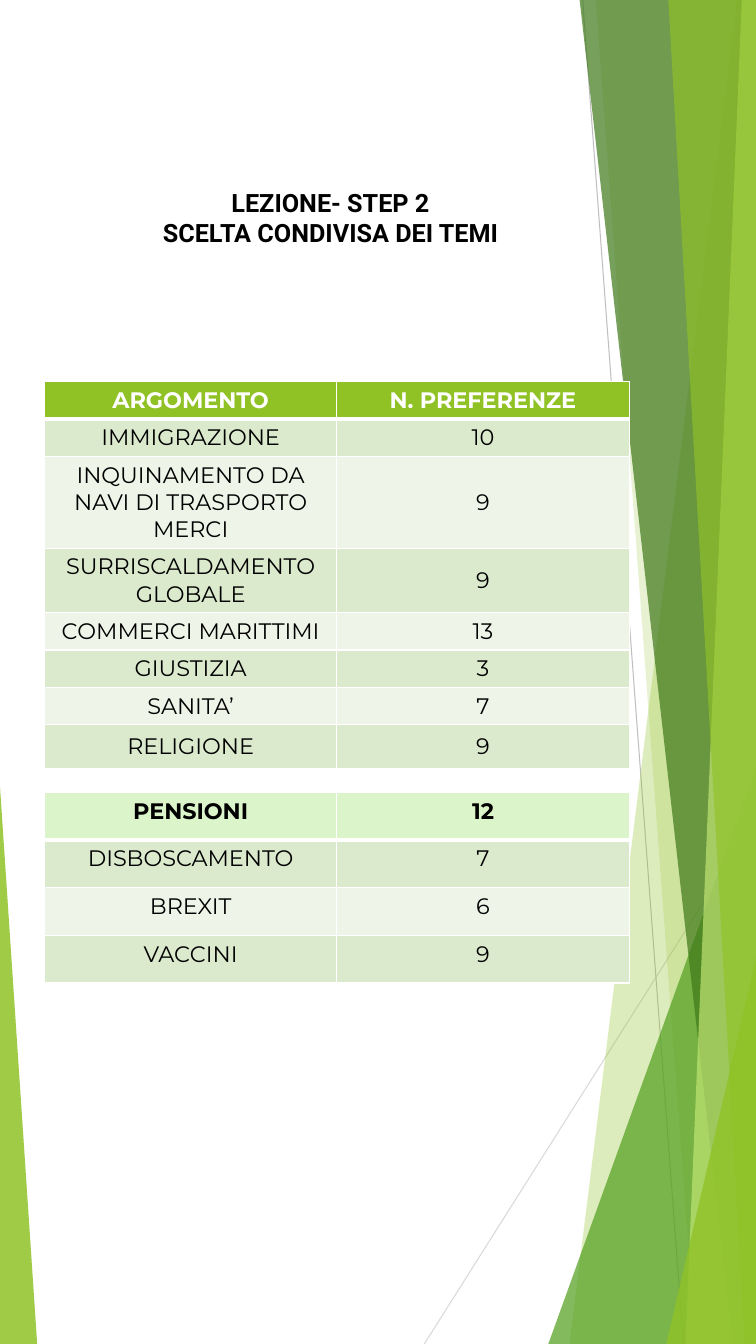
from dataclasses import dataclass

from lxml.etree import SubElement
from pptx import Presentation
from pptx.dml.color import RGBColor
from pptx.enum.shapes import MSO_CONNECTOR
from pptx.enum.text import MSO_ANCHOR, PP_ALIGN
from pptx.oxml.ns import qn
from pptx.slide import Slide
from pptx.table import _Cell as Cell
from pptx.util import Pt

WIDTH, HEIGHT = 540, 960
WHITE = RGBColor(0xFF, 0xFF, 0xFF)
BLACK = RGBColor(0x00, 0x00, 0x00)
LIME = RGBColor(0x90, 0xC2, 0x26)
GREEN = RGBColor(0x54, 0xA0, 0x21)
FOREST = RGBColor(0x3F, 0x78, 0x19)
PALE_LIME = RGBColor(0xC0, 0xE4, 0x74)
MINT = RGBColor(0xDB, 0xF4, 0xCA)
BANDS = (RGBColor(0xDB, 0xE9, 0xCD), RGBColor(0xEE, 0xF4, 0xE8))
LIGHT_GRAY = RGBColor(0xD9, 0xD9, 0xD9)
GRAY = RGBColor(0xBF, 0xBF, 0xBF)

Point = tuple[float, float]


@dataclass(frozen=True)
class Facet:
    points: tuple[Point, ...]
    color: RGBColor
    opacity: int


@dataclass(frozen=True)
class Ray:
    start: Point
    end: Point
    color: RGBColor


@dataclass(frozen=True)
class TopicTable:
    top: float
    row_heights: tuple[float, ...]
    rows: tuple[tuple[str, str], ...]
    header_fill: RGBColor
    header_color: RGBColor
    anchor: MSO_ANCHOR


def right_band(top_x: float, bottom_x: float, color: RGBColor, opacity: int) -> Facet:
    corners = ((top_x, 0), (bottom_x, HEIGHT), (WIDTH, HEIGHT), (WIDTH, 0))
    return Facet(corners, color, opacity)


def right_wedge(bottom_x: float, top_y: float, color: RGBColor, opacity: int) -> Facet:
    corners = ((bottom_x, HEIGHT), (WIDTH, top_y), (WIDTH, HEIGHT))
    return Facet(corners, color, opacity)


BACKDROP = (
    Facet(((0, 561.6), (26.6, HEIGHT), (0, HEIGHT)), LIME, 85),
    Ray((303.1, HEIGHT), (WIDTH, 585), LIGHT_GRAY),
    Ray((416.2, 0), (488.2, HEIGHT), GRAY),
    right_band(526.3, 406.8, LIME, 30),
    right_band(425.5, 496.8, LIME, 20),
    right_wedge(391.7, 548.6, GREEN, 72),
    right_band(414, 523.4, FOREST, 70),
    right_band(529.9, 489.6, PALE_LIME, 70),
    right_band(477.4, 532.1, LIME, 65),
    right_wedge(475.9, 684.7, LIME, 80),
)

TABLES = (
    TopicTable(
        272.6,
        (26.2, 26.2, 54.7, 38.9, 26.2, 26.2, 26.2, 31.7),
        (
            ("ARGOMENTO", "N. PREFERENZE"),
            ("IMMIGRAZIONE", "10"),
            ("INQUINAMENTO DA NAVI DI TRASPORTO MERCI", "9"),
            ("SURRISCALDAMENTO GLOBALE", "9"),
            ("COMMERCI MARITTIMI", "13"),
            ("GIUSTIZIA", "3"),
            ("SANITA’", "7"),
            ("RELIGIONE", "9"),
        ),
        LIME, WHITE, MSO_ANCHOR.MIDDLE,
    ),
    TopicTable(
        566.2,
        (34,) * 4,
        (("PENSIONI", "12"), ("DISBOSCAMENTO", "7"), ("BREXIT", "6"), ("VACCINI", "9")),
        MINT, BLACK, MSO_ANCHOR.TOP,
    ),
)


def draw_facet(slide: Slide, facet: Facet) -> None:
    first, *others = [(Pt(x), Pt(y)) for x, y in facet.points]
    builder = slide.shapes.build_freeform(*first)
    builder.add_line_segments(others)
    shape = builder.convert_to_shape()
    shape.shadow.inherit = False
    shape.line.fill.background()
    shape.fill.solid()
    shape.fill.fore_color.rgb = facet.color
    color = shape.fill._xPr.find(qn("a:solidFill"))[0]
    SubElement(color, qn("a:alpha"), val=str(facet.opacity * 1000))


def draw_ray(slide: Slide, ray: Ray) -> None:
    ends = [Pt(value) for value in ray.start + ray.end]
    connector = slide.shapes.add_connector(MSO_CONNECTOR.STRAIGHT, *ends)
    connector.line.color.rgb = ray.color
    connector.line.width = Pt(0.75)
    SubElement(connector._element.spPr, qn("a:effectLst"))


def set_borders(cell: Cell, row: int) -> None:
    properties = cell._tc.get_or_add_tcPr()
    widths = {"L": 1, "R": 1, "T": 3 if row == 1 else 1, "B": 3 if row == 0 else 1}
    for side, width in widths.items():
        line = SubElement(properties, qn(f"a:ln{side}"), w=str(Pt(width)))
        SubElement(SubElement(line, qn("a:solidFill")), qn("a:srgbClr"), val=str(WHITE))


def draw_table(slide: Slide, topics: TopicTable) -> None:
    frame = slide.shapes.add_table(
        len(topics.rows), 2, Pt(31.8), Pt(topics.top), Pt(417.6), Pt(sum(topics.row_heights))
    )
    table = frame.table
    table.first_row = table.horz_banding = False
    for row, (height, texts) in enumerate(zip(topics.row_heights, topics.rows)):
        table.rows[row].height = Pt(height)
        is_header = row == 0
        for column, text in enumerate(texts):
            cell = table.cell(row, column)
            set_borders(cell, row)
            cell.fill.solid()
            cell.fill.fore_color.rgb = topics.header_fill if is_header else BANDS[(row - 1) % 2]
            cell.vertical_anchor = topics.anchor
            cell.text = text
            paragraph = cell.text_frame.paragraphs[0]
            paragraph.alignment = PP_ALIGN.CENTER
            paragraph.font.name = "Montserrat"
            paragraph.font.size = Pt(16)
            paragraph.font.bold = is_header
            paragraph.font.color.rgb = topics.header_color if is_header else BLACK


def draw_title(slide: Slide) -> None:
    box = slide.shapes.add_textbox(Pt(59), Pt(130.3), Pt(354.2), Pt(51))
    box.text_frame.word_wrap = True
    box.text_frame.text = "LEZIONE- STEP 2\nSCELTA CONDIVISA DEI TEMI"
    for paragraph in box.text_frame.paragraphs:
        paragraph.alignment = PP_ALIGN.CENTER
        paragraph.font.name = "Roboto"
        paragraph.font.size = Pt(18)
        paragraph.font.bold = True
        paragraph.font.color.rgb = BLACK


def main() -> None:
    presentation = Presentation()
    presentation.slide_width = Pt(WIDTH)
    presentation.slide_height = Pt(HEIGHT)
    slide = presentation.slides.add_slide(presentation.slide_layouts[6])
    for item in BACKDROP:
        if isinstance(item, Facet):
            draw_facet(slide, item)
        else:
            draw_ray(slide, item)
    for topics in TABLES:
        draw_table(slide, topics)
    draw_title(slide)
    presentation.save("out.pptx")


if __name__ == "__main__":
    main()
